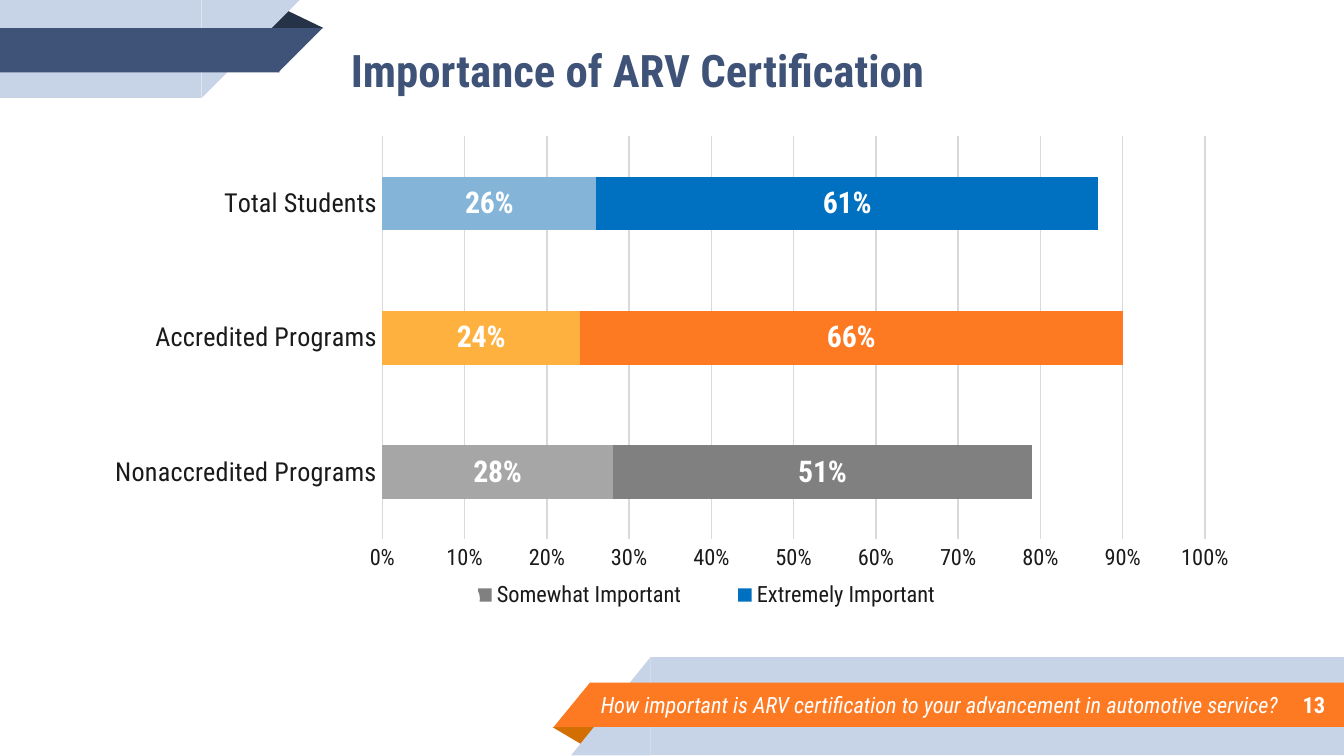
"""Build the certification importance slide with a stacked bar chart."""
from lxml import etree
from pptx import Presentation
from pptx.chart.data import CategoryChartData
from pptx.dml.color import RGBColor
from pptx.enum import chart as ch, shapes, text
from pptx.util import Inches, Pt

FONT = "Roboto Condensed"
COLORS = {"white": "FFFFFF", "pale": "C7D3E6", "navy": "3F5378", "dark": "263248",
          "orange": "FD7A22", "brown": "D26F00", "ink": "1A1A1A", "grid": "D9D9D9",
          "blue": "0070C0", "sky": "85B4D9", "amber": "FFB13F", "gray": "808080",
          "silver": "A6A6A6"}
TITLE = "Importance of ARV Certification"
QUESTION = "How important is ARV certification to your advancement in automotive service?"
PAGE = "13"
RIBBONS = [
    ("ISOSCELES_TRIANGLE", (4.11, 5.41, 0.35, 0.14), "brown", "rot"),
    ("RECTANGLE", (4.84, 4.89, 5.17, 0.73), "pale", None),
    ("RIGHT_TRIANGLE", (4.25, 4.89, 0.59, 0.73), "pale", "flipH"),
    ("RECTANGLE", (4.39, 5.08, 5.62, 0.33), "orange", None),
    ("RIGHT_TRIANGLE", (4.12, 5.08, 0.27, 0.33), "orange", "flipH"),
    ("ISOSCELES_TRIANGLE", (1.98, 0.07, 0.43, 0.14), "dark", None),
    ("RECTANGLE", (0, 0, 1.5, 0.73), "pale", None),
    ("RIGHT_TRIANGLE", (1.5, 0, 0.73, 0.73), "pale", "flipV"),
    ("RECTANGLE", (0, 0.21, 2.08, 0.33), "navy", None),
    ("RIGHT_TRIANGLE", (2.07, 0.21, 0.33, 0.33), "navy", "flipV"),
]
LEGEND_DOTS = [("OVAL", (x, 4.37, 0.12, 0.17), "white", None) for x in (5.14, 3.45)]
CATEGORIES = ["Nonaccredited Programs", "Accredited Programs", "Total Students"]
SERIES = [
    ("Somewhat Important", (0.28, 0.24, 0.26), "gray", ("silver", "amber", "sky")),
    ("Extremely Important", (0.51, 0.66, 0.61), "blue", ("gray", "orange", "blue")),
]


def rgb(name):
    return RGBColor.from_string(COLORS[name])


def paint(fill, color):
    fill.solid()
    fill.fore_color.rgb = rgb(color)


def style(font, size, color, bold=False, italic=False):
    font.name, font.size = FONT, Pt(size)
    font.bold, font.italic = bold, italic
    font.color.rgb = rgb(color)


def place(sp, box):
    sp.left, sp.top, sp.width, sp.height = map(Inches, box)


def write(sp, words, box, size, color, align="LEFT", **fmt):
    place(sp, box)
    tf = sp.text_frame
    tf.word_wrap, tf.auto_size = True, text.MSO_AUTO_SIZE.NONE
    tf.vertical_anchor = text.MSO_ANCHOR.MIDDLE
    tf.margin_left = tf.margin_right = tf.margin_top = tf.margin_bottom = Inches(0.1)
    p = tf.paragraphs[0]
    p.alignment, p.space_before = text.PP_ALIGN[align], Pt(0)
    pPr = p._p.get_or_add_pPr()
    pPr.set("marL", "0")
    pPr.set("indent", "0")
    etree.SubElement(pPr, "{http://schemas.openxmlformats.org/drawingml/2006/main}buNone")
    r = p.add_run()
    r.text = words
    style(r.font, size, color, **fmt)


def add_shape(s, kind, box, color, turn):
    sp = s.shapes.add_shape(shapes.MSO_SHAPE[kind], *map(Inches, box))
    sp.shadow.inherit = False
    paint(sp.fill, color)
    sp.line.fill.background()
    if kind == "ISOSCELES_TRIANGLE":
        sp.adjustments[0] = 0.324
    if turn == "rot":
        sp.rotation = 180
    elif turn:
        sp._element.spPr.xfrm.set(turn, "1")


def set_layout(parent, before, box, inner=False):
    ns = "http://schemas.openxmlformats.org/drawingml/2006/chart"
    for old in parent.findall(f"{{{ns}}}layout"):
        parent.remove(old)
    layout = etree.Element(f"{{{ns}}}layout")
    manual = etree.SubElement(layout, f"{{{ns}}}manualLayout")
    parts = [("layoutTarget", "inner")] if inner else []
    parts += [("xMode", "edge"), ("yMode", "edge"), *zip("xywh", map(str, box))]
    for tag, val in parts:
        etree.SubElement(manual, f"{{{ns}}}{tag}").set("val", val)
    parent.find(f"{{{ns}}}{before}").addprevious(layout)


def add_bars(s):
    data = CategoryChartData(number_format="0%")
    data.categories = CATEGORIES
    for name, values, *_ in SERIES:
        data.add_series(name, values)
    box = map(Inches, (0.69, 0.94, 8.62, 3.75))
    chart = s.shapes.add_chart(ch.XL_CHART_TYPE.BAR_STACKED, *box, data).chart
    chart.has_title = False
    chart.font.name, chart.font.size = "Arial", Pt(10)
    plot = chart.plots[0]
    plot.gap_width, plot.overlap, plot.vary_by_categories = 150, 100, False
    for series, (_, _, color, points) in zip(plot.series, SERIES):
        paint(series.format.fill, color)
        for i, point in enumerate(points):
            if point != color:
                paint(series.points[i].format.fill, point)
        labels = series.data_labels
        labels.show_value = True
        labels.number_format, labels.number_format_is_linked = "0%", False
        style(labels.font, 16, "white", bold=True)
    cat, val = chart.category_axis, chart.value_axis
    for axis, size in ((cat, 14), (val, 12)):
        axis.major_tick_mark = axis.minor_tick_mark = ch.XL_TICK_MARK.NONE
        style(axis.tick_labels.font, size, "ink")
    val.minimum_scale, val.maximum_scale, val.major_unit = 0, 1, 0.1
    val.tick_labels.number_format = "0%"
    val.tick_labels.number_format_is_linked = False
    val.format.line.fill.background()
    val.has_major_gridlines = True
    for line in (cat.format.line, val.major_gridlines.format.line):
        line.color.rgb, line.width = rgb("grid"), Pt(0.75)
    chart.has_legend = True
    legend = chart.legend
    legend.position, legend.include_in_layout = ch.XL_LEGEND_POSITION.BOTTOM, False
    style(legend.font, 12, "ink")
    set_layout(chart._chartSpace.chart.plotArea, "barChart", (0.25, 0.02, 0.71, 0.8), True)
    set_layout(legend._element, "overlay", (0.29, 0.89, 0.48, 0.08))


def main():
    prs = Presentation()
    prs.slide_width = Inches(10)
    prs.slide_height = prs.slide_width * 9 // 16
    s = prs.slides.add_slide(prs.slide_layouts[1])
    title, body = s.placeholders
    for ribbon in RIBBONS:
        add_shape(s, *ribbon)
    s.shapes._spTree.extend([body._element, title._element])
    write(body, QUESTION, (4.37, 5.07, 5.31, 0.35), 12, "white", italic=True)
    box = (8.33, 5.07, 1.63, 0.35)
    number = s.shapes.add_textbox(*map(Inches, box))
    write(number, PAGE, box, 12, "white", "RIGHT", bold=True)
    write(title, TITLE, (2.51, 0.1, 6.48, 0.84), 24, "navy", bold=True)
    add_bars(s)
    for dot in LEGEND_DOTS:
        add_shape(s, *dot)
    prs.save("out.pptx")


if __name__ == "__main__":
    main()
